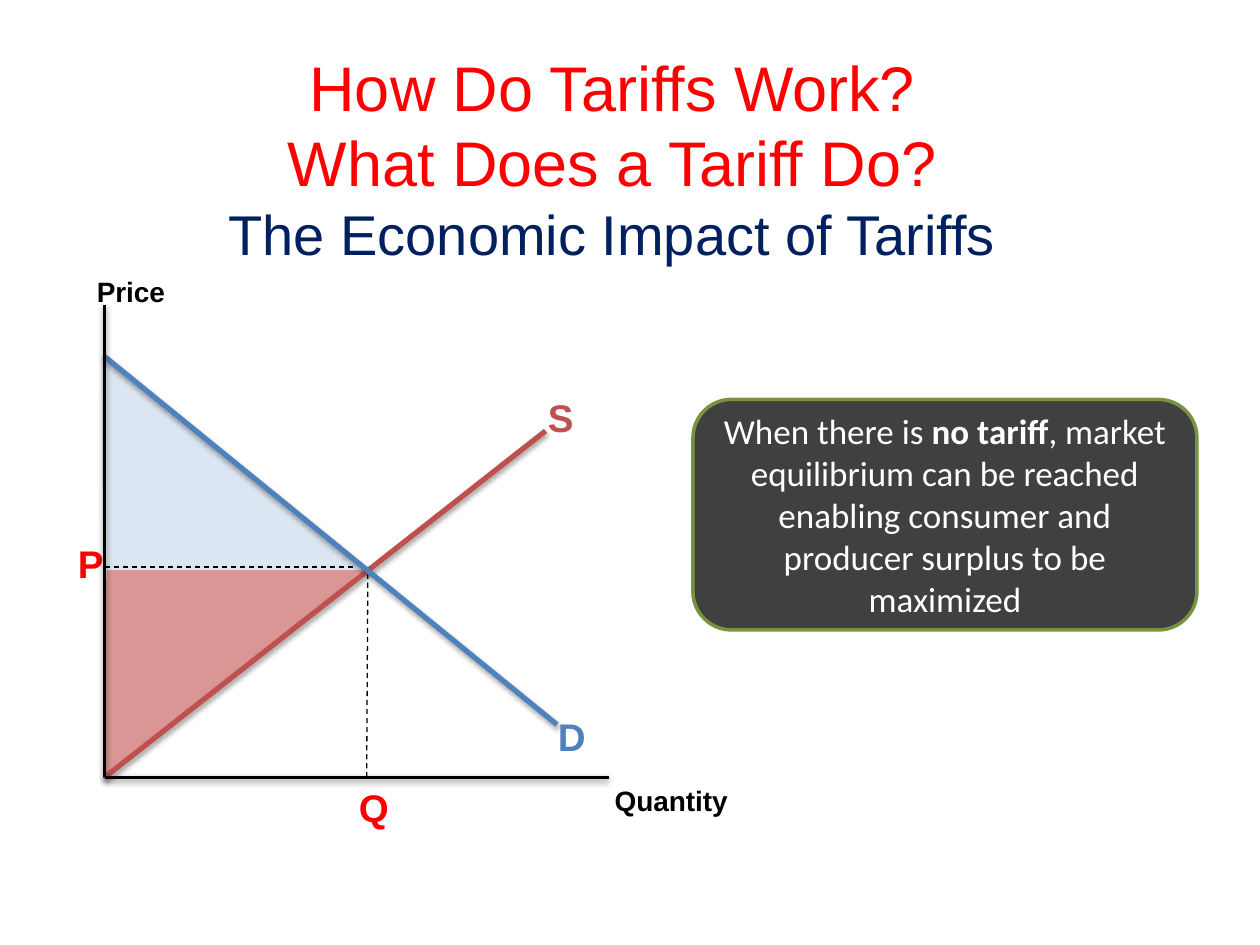
from lxml import etree
from pptx import Presentation
from pptx.dml.color import RGBColor
from pptx.enum.dml import MSO_LINE
from pptx.enum.shapes import MSO_CONNECTOR, MSO_SHAPE
from pptx.enum.text import MSO_ANCHOR, PP_ALIGN
from pptx.oxml.ns import qn
from pptx.util import Inches, Pt

STRAIGHT = MSO_CONNECTOR.STRAIGHT
ROUNDED = MSO_SHAPE.ROUNDED_RECTANGLE
DASH = MSO_LINE.DASH
MIDDLE = MSO_ANCHOR.MIDDLE
CENTER = PP_ALIGN.CENTER

COLORS = {
    "black": "000000", "white": "FFFFFF", "red": "FF0000", "navy": "002060",
    "supply": "C0504D", "demand": "4F81BD",
    "producer": "D99694", "consumer": "DCE6F2",
    "callout": "404040", "callout_border": "77933C",
}
COLORS = {name: RGBColor.from_string(value) for name, value in COLORS.items()}

presentation = Presentation()
presentation.slide_width = Inches(10)
presentation.slide_height = Inches(7.5)
slide = presentation.slides.add_slide(presentation.slide_layouts[6])


def add_line(start, end, color, width, dashed=False, shadow=False):
    line = slide.shapes.add_connector(
        STRAIGHT, *[Inches(value) for value in start + end])
    line.line.color.rgb = COLORS[color]
    line.line.width = Pt(width)
    if dashed:
        line.line.dash_style = DASH
    effects = etree.SubElement(line._element.spPr, qn("a:effectLst"))
    if shadow:
        outer = etree.SubElement(effects, qn("a:outerShdw"), blurRad="40000",
                                 dist="20000", dir="5400000", rotWithShape="0")
        shade = etree.SubElement(outer, qn("a:srgbClr"), val="000000")
        etree.SubElement(shade, qn("a:alpha"), val="38000")


def format_font(font, name, size, color, bold=False):
    font.name = name
    font.size = Pt(size)
    font.bold = bold
    font.color.rgb = COLORS[color]


# Equilibrium quantity guide
add_line((2.91, 6.17), (2.92, 4.5), "black", 0.75, dashed=True)

# Producer and consumer surplus areas
surplus_areas = [
    ("producer", [(0.83, 6.17), (0.86, 4.49), (2.87, 4.52)]),
    ("consumer", [(0.82, 2.83), (0.83, 4.51), (2.86, 4.51)]),
]
for color, corners in surplus_areas:
    points = [(Inches(x), Inches(y)) for x, y in corners]
    builder = slide.shapes.build_freeform(*points[0])
    builder.add_line_segments(points[1:], close=True)
    area = builder.convert_to_shape()
    area.shadow.inherit = False
    area.fill.solid()
    area.fill.fore_color.rgb = COLORS[color]
    area.line.color.rgb = COLORS[color]
    area.line.width = Pt(2)

# Supply and demand curves, equilibrium price guide
add_line((0.83, 6.17), (4.33, 3.42), "supply", 3, shadow=True)
add_line((0.83, 2.83), (4.42, 5.75), "demand", 3, shadow=True)
add_line((0.83, 4.5), (2.83, 4.5), "black", 0.75, dashed=True)

# Curve, axis and equilibrium labels
labels = [
    ("S", 4.25, 3.08, 0.83, 0.47, 22, "supply"),
    ("D", 4.33, 5.61, 0.83, 0.47, 22, "demand"),
    ("Price", 0.67, 2.13, 0.83, 0.37, 16, "black"),
    ("Quantity", 4.78, 6.17, 1.14, 0.37, 16, "black"),
    ("P", 0.52, 4.24, 0.42, 0.47, 22, "red"),
    ("Q", 2.75, 6.17, 0.83, 0.47, 22, "red"),
]
for text, left, top, width, height, size, color in labels:
    label = slide.shapes.add_textbox(
        Inches(left), Inches(top), Inches(width), Inches(height))
    label.text_frame.word_wrap = True
    label.text_frame.text = text
    format_font(label.text_frame.paragraphs[0].runs[0].font,
                "Arial", size, color, bold=True)

# Title
title = slide.shapes.add_textbox(Inches(0.5), Inches(0.75), Inches(9), Inches(1))
title.text_frame.word_wrap = True
title.text_frame.vertical_anchor = MIDDLE
title_lines = [
    ("How Do Tariffs Work?", 36, "red"),
    ("What Does a Tariff Do?", 36, "red"),
    ("The Economic Impact of Tariffs", 32, "navy"),
]
title.text_frame.text = "\n".join(line[0] for line in title_lines)
for paragraph, (_, size, color) in zip(title.text_frame.paragraphs, title_lines):
    paragraph.alignment = CENTER
    format_font(paragraph.runs[0].font, "Arial", size, color)
# A right indent sets the first line slightly left of centre
title.text_frame.paragraphs[0]._p.get_or_add_pPr().set("marR", str(Inches(0.28)))

# Callout
callout = slide.shapes.add_shape(
    ROUNDED, Inches(5.5), Inches(3.17), Inches(4), Inches(1.83))
callout.shadow.inherit = False
callout.fill.solid()
callout.fill.fore_color.rgb = COLORS["callout"]
callout.line.color.rgb = COLORS["callout_border"]
callout.line.width = Pt(2)
callout.text_frame.word_wrap = True
callout.text_frame.vertical_anchor = MIDDLE
paragraph = callout.text_frame.paragraphs[0]
paragraph.alignment = CENTER
callout_runs = [
    ("When there is ", False),
    ("no tariff", True),
    (", market equilibrium can be reached enabling consumer "
     "and producer surplus to be maximized", False),
]
for text, bold in callout_runs:
    run = paragraph.add_run()
    run.text = text
    format_font(run.font, "Calibri", 20, "white", bold)

# Price and quantity axes
for end in [(0.83, 2.42), (4.83, 6.17)]:
    add_line((0.83, 6.17), end, "black", 2, shadow=True)

presentation.save("out.pptx")
